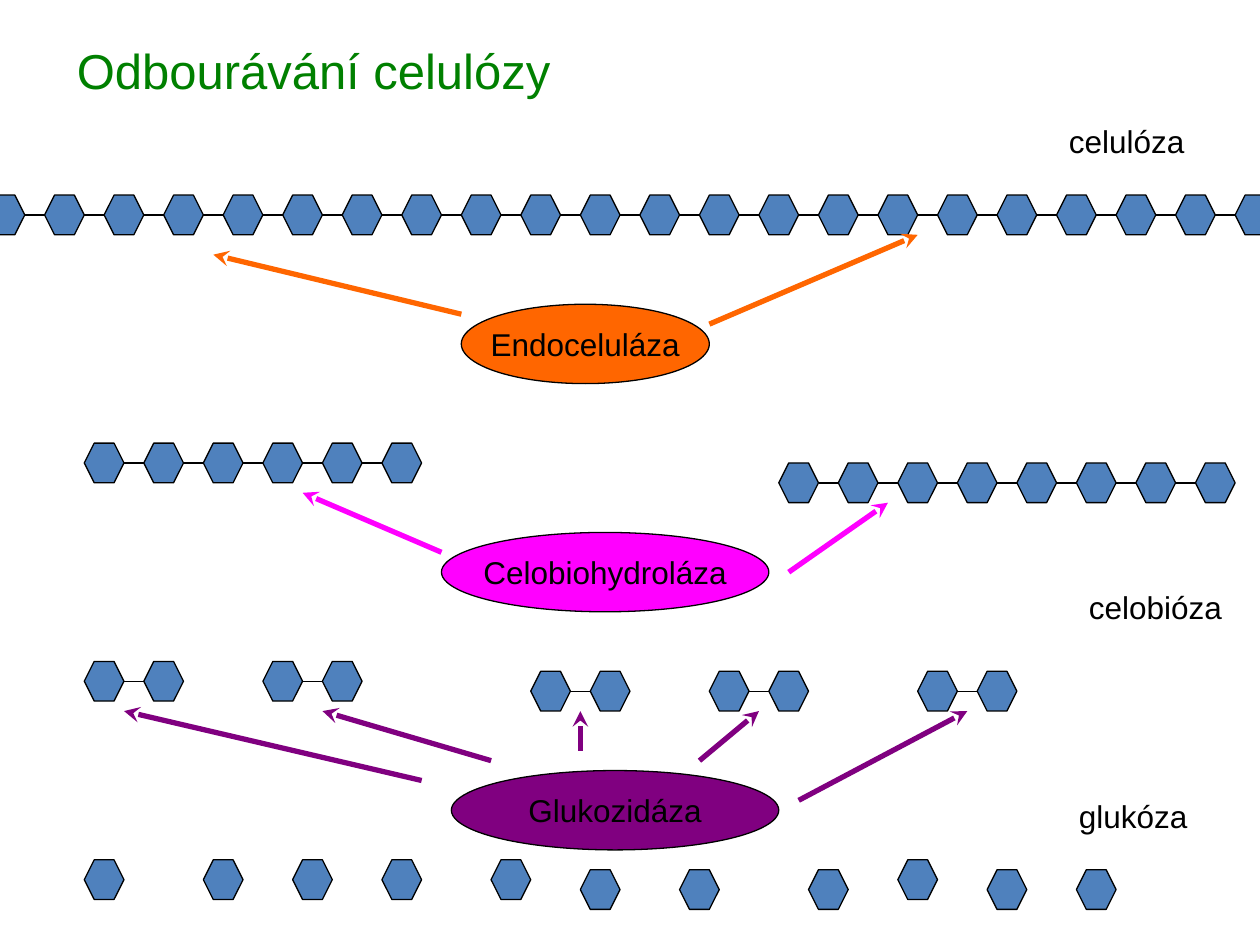
from dataclasses import dataclass

from lxml import etree
from pptx import Presentation
from pptx import util as u
from pptx.dml.color import RGBColor
from pptx.enum import shapes, text
from pptx.oxml.ns import qn


@dataclass(frozen=True)
class Theme:
    font: str = "Arial"
    title_size: int = 28
    body_size: int = 18
    title: str = "008000"
    ink: str = "000000"
    sugar: str = "4F81BD"
    endo: str = "FF6600"
    cellobio: str = "FF00FF"
    gluco: str = "800080"
    thin: float = 0.75
    thick: float = 3


THEME = Theme()
WIDTH, HEIGHT = u.Inches(10), u.Inches(7.5)
UNIT = WIDTH / 127  # grid step
HEX, PITCH = 4, 6   # hexagon side and chain spacing, in grid steps

# (first column, row, number of units)
CHAINS = [
    (-2, 19, 22),
    (8, 44, 6), (78, 46, 8),
    (8, 66, 2), (26, 66, 2), (53, 67, 2), (71, 67, 2), (92, 67, 2),
]
GLUCOSE = {86: (8, 20, 29, 38, 49, 90), 87: (58, 68, 81, 99, 108)}

# name, colour, (column, row, columns wide), arrows as (column, row) pairs
ENZYMES = [
    ("Endoceluláza", THEME.endo, (46, 30, 25),
     [((46, 31), (21, 25)), ((71, 32), (92, 23))]),
    ("Celobiohydroláza", THEME.cellobio, (44, 53, 33),
     [((44, 55), (30, 49)), ((79, 57), (89, 50))]),
    ("Glukozidáza", THEME.gluco, (45, 77, 33),
     [((42, 78), (12, 71)), ((49, 76), (32, 71)), ((80, 80), (97, 71)),
      ((70, 76), (76, 71)), ((58, 75), (58, 71))]),
]
LABELS = [("celulóza", 106, 11, 15), ("celobióza", 108, 58, 17),
          ("glukóza", 107, 79, 14)]


def x(col):
    return round((col + 0.5) * UNIT)


def y(row):
    return round((row + 0.67) * UNIT)


def span(steps):
    return round(steps * UNIT)


def rgb(code):
    return RGBColor.from_string(code)


def write(sp, words, size, color, align, anchor, wrap=False):
    tf = sp.text_frame
    tf.text = words
    tf.word_wrap = wrap
    tf.vertical_anchor = anchor
    p = tf.paragraphs[0]
    p.alignment = align
    font = p.runs[0].font
    font.name, font.size = THEME.font, u.Pt(size)
    font.color.rgb = rgb(color)


def add_outlined(slide, kind, col, row, cols, rows, fill):
    sp = slide.shapes.add_shape(kind, x(col), y(row), span(cols), span(rows))
    sp.shadow.inherit = False
    sp.fill.solid()
    sp.fill.fore_color.rgb = rgb(fill)
    sp.line.color.rgb = rgb(THEME.ink)
    sp.line.width = u.Pt(THEME.thin)
    return sp


def add_line(slide, start, end, color, width, arrow=False):
    line = slide.shapes.add_connector(
        shapes.MSO_CONNECTOR.STRAIGHT,
        x(start[0]), y(start[1]), x(end[0]), y(end[1]))
    line.line.color.rgb = rgb(color)
    line.line.width = u.Pt(width)
    if arrow:
        etree.SubElement(line.line._get_or_add_ln(), qn("a:tailEnd"),
                         type="stealth", w="med", len="med")
    etree.SubElement(line._element.spPr, qn("a:effectLst"))


def add_chain(slide, col, row, count):
    """Draw hexagons in a row, each joined to the one before it."""
    for left in range(col, col + count * PITCH, PITCH):
        add_outlined(slide, shapes.MSO_SHAPE.HEXAGON, left, row, HEX, HEX,
                     THEME.sugar)
        if left > col:
            middle = row + HEX / 2
            add_line(slide, (left - PITCH + HEX, middle), (left, middle),
                     THEME.ink, THEME.thin)


def add_enzyme(slide, name, color, place, arrows):
    col, row, cols = place
    sp = add_outlined(slide, shapes.MSO_SHAPE.OVAL, col, row, cols, 8, color)
    write(sp, name, THEME.body_size, THEME.ink, text.PP_ALIGN.CENTER,
          text.MSO_ANCHOR.MIDDLE)
    for start, end in arrows:
        add_line(slide, start, end, color, THEME.thick, arrow=True)


def add_label(slide, words, col, row, cols):
    sp = slide.shapes.add_textbox(x(col), y(row), span(cols), span(5))
    write(sp, words, THEME.body_size, THEME.ink, text.PP_ALIGN.LEFT,
          text.MSO_ANCHOR.TOP)


def add_title(slide, words):
    sp = slide.shapes.add_textbox(x(6), y(1), round(WIDTH * 0.9), span(10.8))
    write(sp, words, THEME.title_size, THEME.title, text.PP_ALIGN.LEFT,
          text.MSO_ANCHOR.MIDDLE, wrap=True)


def main():
    prs = Presentation()
    prs.slide_width, prs.slide_height = WIDTH, HEIGHT
    slide = prs.slides.add_slide(prs.slide_layouts[6])
    add_title(slide, "Odbourávání celulózy")
    for chain in CHAINS:
        add_chain(slide, *chain)
    for row, cols in GLUCOSE.items():
        for col in cols:
            add_chain(slide, col, row, 1)
    for enzyme in ENZYMES:
        add_enzyme(slide, *enzyme)
    for label in LABELS:
        add_label(slide, *label)
    prs.save("out.pptx")


if __name__ == "__main__":
    main()
